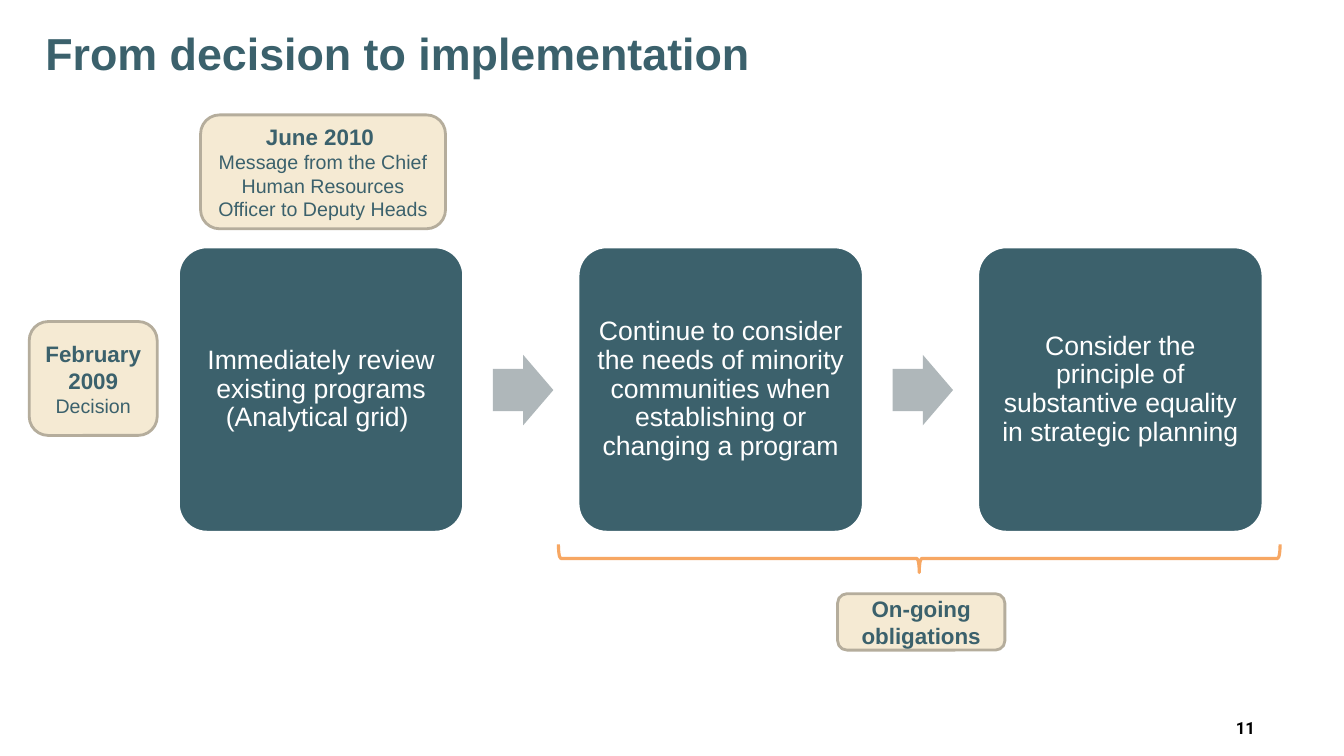
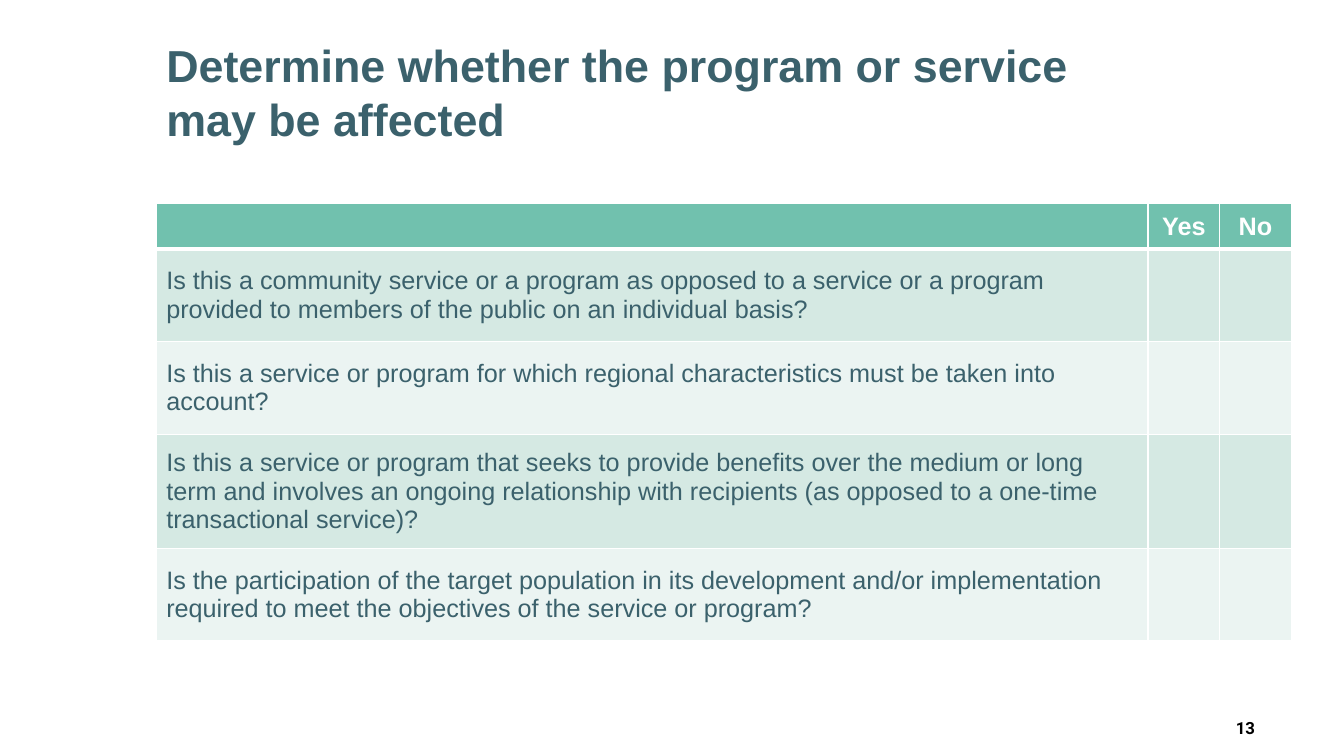
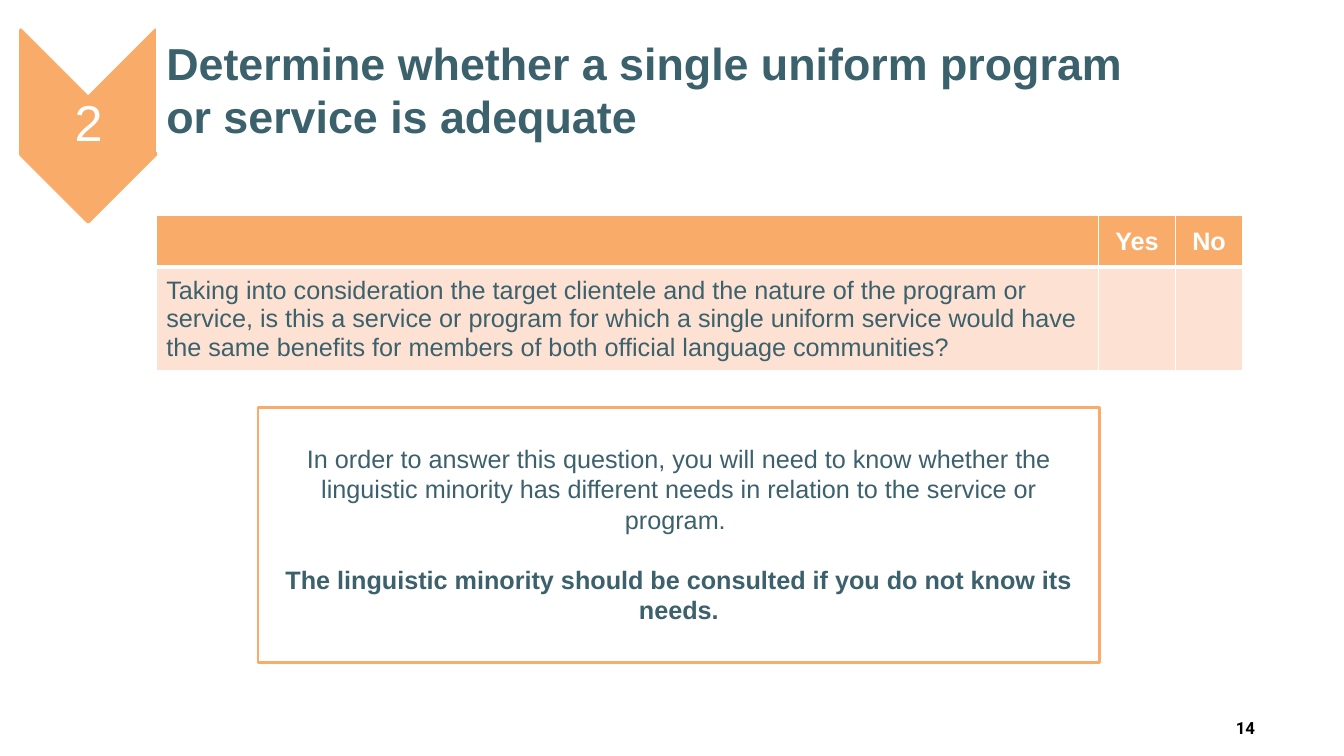
from dataclasses import dataclass

from lxml import etree
from pptx import Presentation
from pptx.dml.color import RGBColor
from pptx.enum.shapes import MSO_SHAPE
from pptx.enum.text import MSO_ANCHOR, MSO_AUTO_SIZE, PP_ALIGN
from pptx.oxml.ns import qn
from pptx.util import Inches, Pt

LEFT, CENTER, RIGHT = PP_ALIGN.LEFT, PP_ALIGN.CENTER, PP_ALIGN.RIGHT
TOP, MIDDLE = MSO_ANCHOR.TOP, MSO_ANCHOR.MIDDLE
NO_FIT = MSO_AUTO_SIZE.NONE
RECT, ROUND = MSO_SHAPE.RECTANGLE, MSO_SHAPE.ROUNDED_RECTANGLE
ARROW, CHEVRON, BRACE = MSO_SHAPE.RIGHT_ARROW, MSO_SHAPE.CHEVRON, MSO_SHAPE.LEFT_BRACE

INK, CARD, WHITE, BLACK = "3B616C", "3C616C", "FFFFFF", "000000"
CREAM, TAUPE, GRAY = "F5EAD3", "B5AD9C", "AFB7BA"
ORANGE, PEACH, BRACE_ORANGE = "F9AB69", "FDE2D4", "F7A763"
GREEN, MINT, PALE_MINT = "71C1AE", "D5E9E3", "EBF4F2"


@dataclass(frozen=True)
class Box:
    x: float
    y: float
    w: float
    h: float

    def emu(self) -> tuple:
        return tuple(Inches(v) for v in (self.x, self.y, self.w, self.h))


@dataclass(frozen=True)
class Line:
    text: str
    size: float = 18
    bold: bool = False
    before: float = 0


@dataclass(frozen=True)
class Note:
    box: Box
    lines: tuple


@dataclass(frozen=True)
class Checklist:
    box: Box
    widths: tuple
    heights: tuple
    header: str
    bands: tuple
    questions: tuple


def rgb(value: str) -> RGBColor:
    return RGBColor.from_string(value)


def paint(fill, color: str) -> None:
    fill.solid()
    fill.fore_color.rgb = rgb(color)


def write(tf, *lines: Line, color=INK, font="Arial", align=CENTER, anchor=MIDDLE,
          insets=(0.1, 0.05, 0.1, 0.05), spacing=None) -> None:
    tf.word_wrap = True
    tf.auto_size = NO_FIT
    tf.vertical_anchor = anchor
    tf.margin_left, tf.margin_top, tf.margin_right, tf.margin_bottom = map(Inches, insets)
    for i, line in enumerate(lines):
        p = tf.paragraphs[0] if i == 0 else tf.add_paragraph()
        p.alignment = align
        p.space_before = Pt(line.before)
        if spacing:
            p.line_spacing = spacing
        r = p.add_run()
        r.text = line.text
        r.font.name, r.font.size, r.font.bold = font, Pt(line.size), line.bold
        r.font.color.rgb = rgb(color)


def add_shape(slide, kind, box: Box, fill=None, line=None, width=2.0, adj=(), rotation=0):
    sp = slide.shapes.add_shape(kind, *box.emu())
    sp.shadow.inherit = False
    sp.rotation = rotation
    for i, value in enumerate(adj):
        sp.adjustments[i] = value
    if fill:
        paint(sp.fill, fill)
    else:
        sp.fill.background()
    if line:
        sp.line.color.rgb = rgb(line)
        sp.line.width = Pt(width)
    else:
        sp.line.fill.background()
    return sp


def add_slide(prs, title: str, box: Box, number: int, insets=(0.1, 0.05, 0.1, 0.05), fill=None):
    slide = prs.slides.add_slide(prs.slide_layouts[5])
    sp = slide.shapes.title
    sp.left, sp.top, sp.width, sp.height = box.emu()
    if fill:
        paint(sp.fill, fill)
    write(sp.text_frame, Line(title, 32, True), align=LEFT, insets=insets)
    tb = slide.shapes.add_textbox(*Box(11.31, 6.94, 1.24, 0.56).emu())
    write(tb.text_frame, Line(str(number), 12, True), color=BLACK, font="Roboto", align=RIGHT)
    return slide


def bring_title_forward(slide) -> None:
    element = slide.shapes.title.element
    element.getparent().append(element)


def add_note(slide, note: Note) -> None:
    sp = add_shape(slide, ROUND, note.box, CREAM, TAUPE)
    write(sp.text_frame, *note.lines)


def set_borders(cell, **widths: float) -> None:
    tcPr = cell._tc.get_or_add_tcPr()
    for side in "LRTB":
        ln = etree.SubElement(tcPr, qn(f"a:ln{side}"), w=str(Pt(widths.get(side, 1))))
        fill = etree.SubElement(ln, qn("a:solidFill"))
        etree.SubElement(fill, qn("a:srgbClr"), val=WHITE)


def add_checklist(slide, data: Checklist) -> None:
    rows = [("", "Yes", "No")] + [(q, "", "") for q in data.questions]
    table = slide.shapes.add_table(len(rows), len(data.widths), *data.box.emu()).table
    for col, width in zip(table.columns, data.widths):
        col.width = Inches(width)
    for i, (row, height) in enumerate(zip(rows, data.heights)):
        table.rows[i].height = Inches(height)
        header = i == 0
        for j, text in enumerate(row):
            cell = table.cell(i, j)
            set_borders(cell, B=3 if header else 1, T=3 if i == 1 else 1)
            paint(cell.fill, data.header if header else data.bands[(i - 1) % len(data.bands)])
            cell.vertical_anchor = MIDDLE
            if text:
                p = cell.text_frame.paragraphs[0]
                p.alignment = CENTER if header else LEFT
                r = p.add_run()
                r.text = text
                r.font.name, r.font.size, r.font.bold = "Arial", Pt(18), header
                r.font.color.rgb = rgb(WHITE if header else INK)


def build_implementation(prs) -> None:
    slide = add_slide(prs, "From decision to implementation", Box(0.45, 0.03, 12.44, 0.98), 11, (0, 0, 0, 0))
    steps = (
        "Immediately review existing programs (Analytical grid) ",
        "Continue to consider the needs of minority communities when establishing or changing a program",
        "Consider the principle of substantive equality in strategic planning",
    )
    first, last, side = 1.77, 9.7, 2.83
    pitch = (last - first) / (len(steps) - 1)
    for i, text in enumerate(steps):
        x = first + i * pitch
        sp = add_shape(slide, ROUND, Box(x, 2.45, side, side), CARD, WHITE, adj=(0.1,))
        write(sp.text_frame, Line(text, 19), color=WHITE, insets=(0.08,) * 4, spacing=0.9)
        if i < len(steps) - 1:
            add_shape(slide, ARROW, Box(x + 3.12, 3.52, 0.6, 0.7), GRAY, adj=(0.6, 0.5))
    notes = (
        Note(Box(1.99, 1.14, 2.43, 1.13), (
            Line("June 2010 ", 16, True),
            Line("Message from the Chief Human Resources Officer to Deputy Heads", 14))),
        Note(Box(0.29, 3.19, 1.27, 1.13), (Line("February 2009", 16, True), Line("Decision", 14))),
        Note(Box(8.31, 5.89, 1.66, 0.56), (Line("On-going obligations", 16, True),)),
    )
    for note in notes:
        add_note(slide, note)
    add_shape(slide, BRACE, Box(8.98, 1.96, 0.28, 7.16), line=BRACE_ORANGE, width=2.25, rotation=270)


def build_affected(prs) -> None:
    slide = add_slide(prs, "Determine whether the program or service may be affected",
                      Box(1.55, 0.28, 9.84, 1.25), 13, fill=WHITE)
    add_checklist(slide, Checklist(
        Box(1.55, 2.02, 11.26, 4.33), (9.84, 0.71, 0.71), (0.45, 0.92, 0.92, 1.13, 0.92),
        GREEN, (MINT, PALE_MINT), (
            "Is this a community service or a program as opposed to a service or a program "
            "provided to members of the public on an individual basis?",
            "Is this a service or program for which regional characteristics must be taken into account?",
            "Is this a service or program that seeks to provide benefits over the medium or long term and "
            "involves an ongoing relationship with recipients (as opposed to a one-time transactional service)?",
            "Is the participation of the target population in its development and/or implementation "
            "required to meet the objectives of the service or program?",
        )))
    bring_title_forward(slide)


def build_adequate(prs) -> None:
    slide = add_slide(prs, "Determine whether a single uniform program or service is adequate",
                      Box(1.55, 0.26, 10.08, 1.25), 14, fill=WHITE)
    add_checklist(slide, Checklist(
        Box(1.55, 2.14, 10.79, 1.54), (9.35, 0.76, 0.67), (0.51, 1.03), ORANGE, (PEACH,), (
            "Taking into consideration the target clientele and the nature of the program or service, "
            "is this a service or program for which a single uniform service would have the same benefits "
            "for members of both official language communities?",
        )))
    add_shape(slide, CHEVRON, Box(-0.08, 0.58, 1.91, 1.34), ORANGE, ORANGE, rotation=90)
    tb = slide.shapes.add_textbox(*Box(0.21, 0.96, 1.34, 0.57).emu())
    write(tb.text_frame, Line("2", 36), color=WHITE, insets=(0.03,) * 4, spacing=0.9)
    bring_title_forward(slide)
    sp = add_shape(slide, RECT, Box(2.56, 4.04, 8.35, 2.53), WHITE, ORANGE)
    write(sp.text_frame,
          Line("In order to answer this question, you will need to know whether the linguistic minority "
               "has different needs in relation to the service or program. "),
          Line("The linguistic minority should be consulted if you do not know its needs.", bold=True, before=21.6),
          color=CARD, anchor=TOP, insets=(0.1, 0.36, 0.1, 0.05))


def main() -> None:
    prs = Presentation()
    prs.slide_width, prs.slide_height = Inches(40 / 3), Inches(7.5)
    build_implementation(prs)
    build_affected(prs)
    build_adequate(prs)
    prs.save("out.pptx")


if __name__ == "__main__":
    main()
